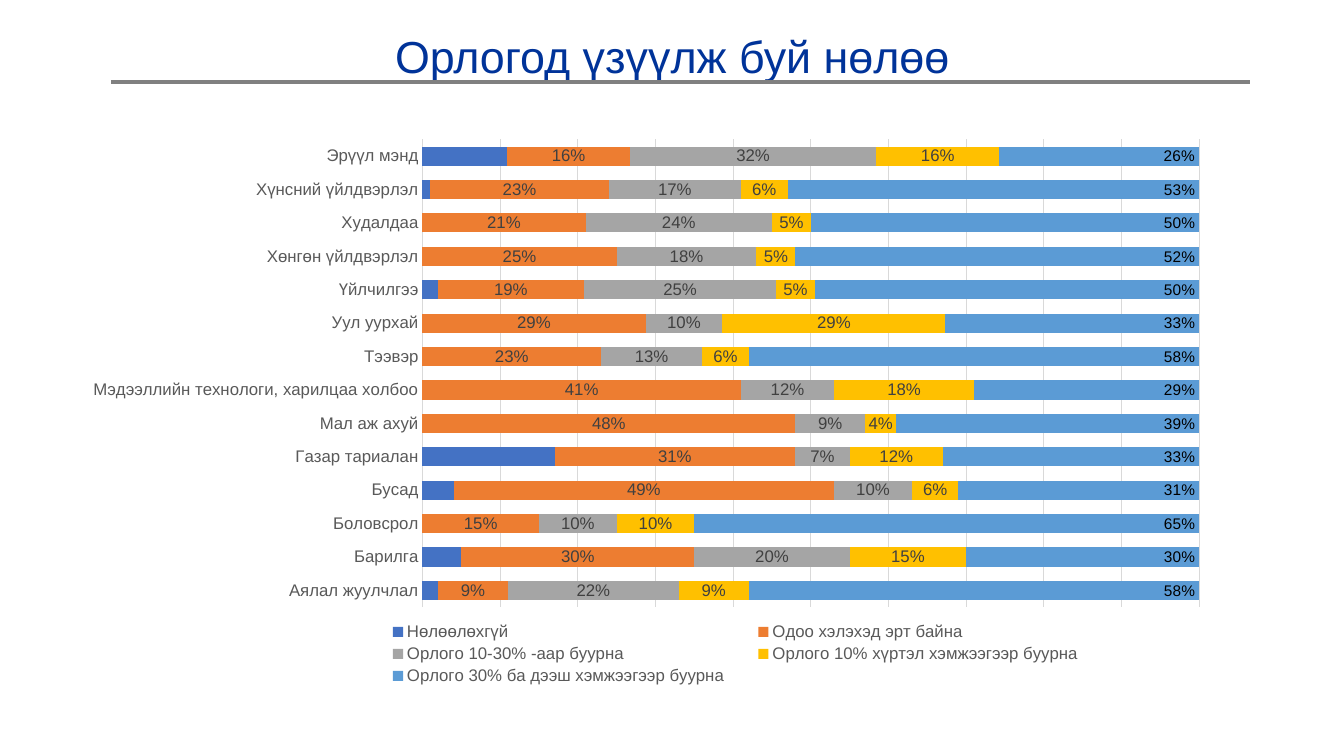
import pptx
import pptx.chart.data
import pptx.dml.color
import pptx.enum.chart
import pptx.enum.shapes
import pptx.enum.text
import pptx.oxml
import pptx.oxml.ns
import pptx.util

# Content
HEADING = "Орлогод үзүүлж буй нөлөө"
SECTORS = [
    "Аялал жуулчлал", "Барилга", "Боловсрол", "Бусад", "Газар тариалан",
    "Мал аж ахуй", "Мэдээллийн технологи, харилцаа холбоо", "Тээвэр",
    "Уул уурхай", "Үйлчилгээ", "Хөнгөн үйлдвэрлэл", "Худалдаа",
    "Хүнсний үйлдвэрлэл", "Эрүүл мэнд",
]
# Answer, colour name, percent per sector
ANSWERS = [
    ("Нөлөөлөхгүй", "blue",
     [2, 5, 0, 4, 17, 0, 0, 0, 0, 2, 0, 0, 1, 11]),
    ("Одоо хэлэхэд эрт байна", "orange",
     [9, 30, 15, 49, 31, 48, 41, 23, 29, 19, 25, 21, 23, 16]),
    ("Орлого 10-30% -аар буурна", "grey",
     [22, 20, 10, 10, 7, 9, 12, 13, 10, 25, 18, 24, 17, 32]),
    ("Орлого 10% хүртэл хэмжээгээр буурна", "yellow",
     [9, 15, 10, 6, 12, 4, 18, 6, 29, 5, 5, 5, 6, 16]),
    ("Орлого 30% ба дээш хэмжээгээр буурна", "sky",
     [58, 30, 65, 31, 33, 39, 29, 58, 33, 50, 52, 50, 53, 26]),
]
POSITION = pptx.enum.chart.XL_LABEL_POSITION
# Label size, colour name and position; the first answer has no labels
CENTRE_LABEL = (12, "label", POSITION.CENTER)
LABELS = [None, CENTRE_LABEL, CENTRE_LABEL, CENTRE_LABEL,
          (11, "black", POSITION.INSIDE_END)]
COLOURS = {
    "blue": "4472C4", "orange": "ED7D31", "grey": "A5A5A5",
    "yellow": "FFC000", "sky": "5B9BD5", "heading": "003399",
    "rule": "808080", "grid": "D9D9D9", "axis": "595959",
    "label": "404040", "black": "000000",
}
FONT = "Arial"

# Geometry in px, 100 to the inch; layouts are fractions of the chart
EMU_PER_PX = 9144
SLIDE_SIZE = (1333, 750)
HEADING_BOX = (92, 28, 1150, 54)
CHART_BOX = (74, 121, 1150, 580)
RULE_ENDS = (110, 81, 1240, 81)
PLOT_LAYOUT = (0.3, 0.03, 0.67, 0.8)
LEGEND_LAYOUT = (0.25, 0.85, 0.64, 0.12)


def px(*lengths):
    return [pptx.util.Emu(length * EMU_PER_PX) for length in lengths]


def colour(name):
    return pptx.dml.color.RGBColor.from_string(COLOURS[name])


def style_font(font, size, colour_name):
    font.name = FONT
    font.size = pptx.util.Pt(size)
    font.color.rgb = colour(colour_name)


def style_line(line, width, colour_name):
    line.width = pptx.util.Pt(width)
    line.color.rgb = colour(colour_name)


def layout_xml(fractions, inner=False):
    target = '<c:layoutTarget val="inner"/>' if inner else ""
    modes = "".join(f'<c:{side}Mode val="edge"/>' for side in "xy")
    sizes = "".join(f'<c:{side} val="{value}"/>'
                    for side, value in zip("xywh", fractions))
    return pptx.oxml.parse_xml(
        f'<c:layout {pptx.oxml.ns.nsdecls("c")}><c:manualLayout>'
        f"{target}{modes}{sizes}</c:manualLayout></c:layout>")


def add_heading(slide):
    heading = slide.shapes.title
    heading.left, heading.top, heading.width, heading.height = px(*HEADING_BOX)
    frame = heading.text_frame
    frame.word_wrap = True
    frame.auto_size = pptx.enum.text.MSO_AUTO_SIZE.NONE
    frame.vertical_anchor = pptx.enum.text.MSO_ANCHOR.MIDDLE
    paragraph = frame.paragraphs[0]
    paragraph.alignment = pptx.enum.text.PP_ALIGN.CENTER
    run = paragraph.add_run()
    run.text = HEADING
    style_font(run.font, 32, "heading")


def add_impact_chart(slide):
    shares = pptx.chart.data.CategoryChartData(number_format="0%")
    shares.categories = SECTORS
    for answer, _, percents in ANSWERS:
        shares.add_series(answer, [percent / 100 for percent in percents])
    chart = slide.shapes.add_chart(
        pptx.enum.chart.XL_CHART_TYPE.BAR_STACKED_100, *px(*CHART_BOX),
        shares).chart
    chart.has_title = False
    chart.font.name = "Calibri"
    chart.font.size = pptx.util.Pt(10)

    # Bars and their labels
    plot = chart.plots[0]
    plot.gap_width, plot.overlap = 75, 100
    plot.vary_by_categories = False
    for series, (_, fill, _), label in zip(plot.series, ANSWERS, LABELS):
        series.format.fill.solid()
        series.format.fill.fore_color.rgb = colour(fill)
        if label:
            size, label_colour, position = label
            labels = series.data_labels
            labels.show_value = True
            labels.number_format = "0%"
            labels.number_format_is_linked = False
            labels.position = position
            style_font(labels.font, size, label_colour)

    # Axes
    sectors = chart.category_axis
    sectors.major_tick_mark = pptx.enum.chart.XL_TICK_MARK.NONE
    sectors.has_major_gridlines = False
    style_font(sectors.tick_labels.font, 12, "axis")
    style_line(sectors.format.line, 0.75, "grid")
    percent_axis = chart.value_axis
    percent_axis.minimum_scale, percent_axis.maximum_scale = 0, 1
    percent_axis.major_unit = 0.1
    percent_axis.has_major_gridlines = True
    style_line(percent_axis.major_gridlines.format.line, 0.75, "grid")
    percent_axis.visible = False

    # Legend
    chart.has_legend = True
    legend = chart.legend
    legend.position = pptx.enum.chart.XL_LEGEND_POSITION.BOTTOM
    legend.include_in_layout = False
    style_font(legend.font, 12, "axis")

    # Fixed places for the plot and the legend
    plot_area = chart.element.find(".//" + pptx.oxml.ns.qn("c:plotArea"))
    legend_part = chart.element.find(".//" + pptx.oxml.ns.qn("c:legend"))
    for part in (plot_area, legend_part):
        for automatic in part.findall(pptx.oxml.ns.qn("c:layout")):
            part.remove(automatic)
    plot_area.insert(0, layout_xml(PLOT_LAYOUT, inner=True))
    legend_part.insert(1, layout_xml(LEGEND_LAYOUT))


def add_rule(slide):
    rule = slide.shapes.add_connector(
        pptx.enum.shapes.MSO_CONNECTOR.STRAIGHT, *px(*RULE_ENDS))
    style_line(rule.line, 3, "rule")
    rule.element.spPr.append(pptx.oxml.parse_xml(
        f'<a:effectLst {pptx.oxml.ns.nsdecls("a")}/>'))


def main():
    deck = pptx.Presentation()
    deck.slide_width, deck.slide_height = px(*SLIDE_SIZE)
    slide = deck.slides.add_slide(deck.slide_layouts.get_by_name("Title Only"))
    add_heading(slide)
    add_impact_chart(slide)
    add_rule(slide)
    deck.save("out.pptx")


if __name__ == "__main__":
    main()
